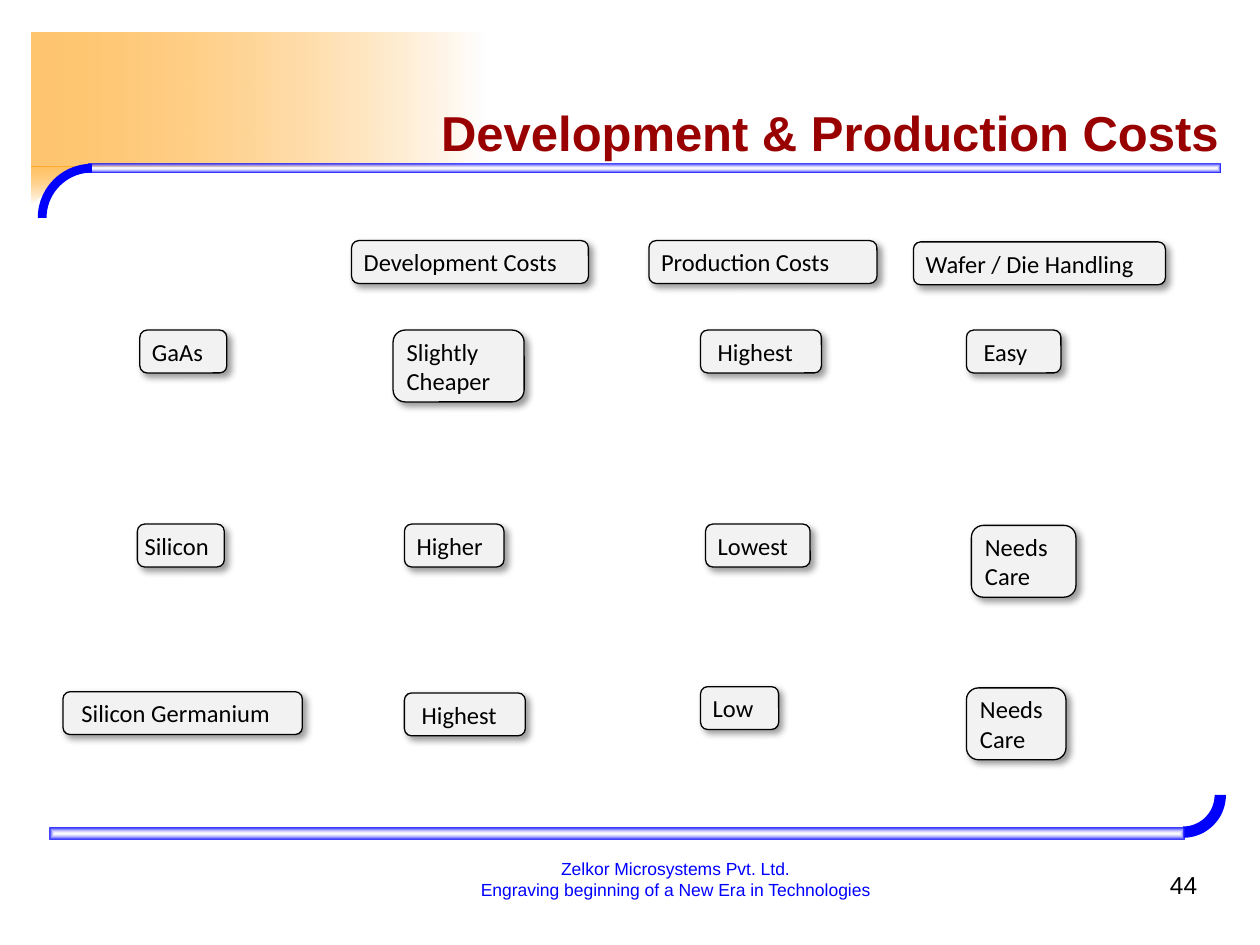
import math
from dataclasses import dataclass

import lxml.etree
import pptx
import pptx.dml.color
import pptx.enum.shapes
import pptx.enum.text
import pptx.oxml
import pptx.oxml.ns
import pptx.util

SHAPE = pptx.enum.shapes.MSO_SHAPE
ANCHOR = pptx.enum.text.MSO_ANCHOR
ALIGN = pptx.enum.text.PP_ALIGN
qn = pptx.oxml.ns.qn


@dataclass(frozen=True)
class Theme:
    heading_font: str = "Arial"
    card_font: str = "Calibri"
    title: str = "990000"
    accent: str = "0000FF"
    glow: str = "FF9900"
    paper: str = "FFFFFF"
    ink: str = "000000"
    card: str = "F2F2F2"
    title_size: int = 28
    body_size: int = 14
    footer_size: int = 10


class SlideBuilder:
    """Draw themed elements on a page measured as 100 columns by 75 rows."""

    def __init__(self, deck, theme):
        self.theme = theme
        self.column = deck.slide_width / 100
        self.row = deck.slide_height / 75
        self.page = deck.slides.add_slide(deck.slide_layouts[6])

    def place(self, left, top, width, height):
        return (round(left * self.column), round(top * self.row),
                round(width * self.column), round(height * self.row))

    def color(self, value):
        return pptx.dml.color.RGBColor.from_string(value)

    def add_lines(self, frame, lines, font, size, color, align, anchor):
        frame.word_wrap = True
        frame.vertical_anchor = anchor
        for index, line in enumerate(lines):
            para = frame.paragraphs[0] if index == 0 else frame.add_paragraph()
            para.alignment = align
            span = para.add_run()
            span.text = line
            span.font.name = font
            span.font.size = pptx.util.Pt(size)
            span.font.color.rgb = self.color(color)
            span.font.bold = size == self.theme.title_size

    def text(self, area, lines, size, color, align):
        box = self.page.shapes.add_textbox(*self.place(*area))
        self.add_lines(box.text_frame, lines, self.theme.heading_font, size, color,
                       align, ANCHOR.BOTTOM)

    def gradient(self, kind, area, stops, angle=None, flip=False):
        shape = self.page.shapes.add_shape(kind, *self.place(*area))
        shape.shadow.inherit = False
        shape.line.fill.background()
        properties = shape._element.spPr
        if flip:
            properties.find(qn("a:xfrm")).set("flipV", "1")
        fill = pptx.oxml.parse_xml(
            f'<a:gradFill {pptx.oxml.ns.nsdecls("a")} rotWithShape="1"><a:gsLst/></a:gradFill>')
        for position, (color, opacity) in zip((0, 100000), stops):
            stop = lxml.etree.SubElement(fill[0], qn("a:gs"), pos=str(position))
            tint = lxml.etree.SubElement(stop, qn("a:srgbClr"), val=color)
            if opacity < 100:
                lxml.etree.SubElement(tint, qn("a:alpha"), val=str(opacity * 1000))
        if angle is None:
            route = lxml.etree.SubElement(fill, qn("a:path"), {"path": "shape"})
            sides = dict.fromkeys("ltrb", "50000")
            lxml.etree.SubElement(route, qn("a:fillToRect"), sides)
        else:
            lxml.etree.SubElement(fill, qn("a:lin"), ang=str(angle * 60000), scaled="1")
        properties.insert(2, fill)

    def bar(self, *area):
        stops = ((self.theme.paper, 27), (self.theme.accent, 100))
        self.gradient(SHAPE.RECTANGLE, area, stops)

    def corner(self, center, inner, outer, start):
        def arc(radius):
            angles = [math.radians(start + step * 5) for step in range(19)]
            return [((center[0] + radius * math.cos(angle)) * self.column,
                     (center[1] + radius * math.sin(angle)) * self.row)
                    for angle in angles]

        points = arc(outer) + arc(inner)[::-1]
        builder = self.page.shapes.build_freeform(*points[0])
        builder.add_line_segments(points[1:], close=True)
        shape = builder.convert_to_shape()
        shape.shadow.inherit = False
        shape.fill.solid()
        shape.fill.fore_color.rgb = self.color(self.theme.accent)
        shape.line.fill.background()

    def card(self, label, left, top, width, lines=1, indent=0.8):
        area = self.place(left, top, width, 1.1 + 2.3 * lines)
        shape = self.page.shapes.add_shape(SHAPE.ROUNDED_RECTANGLE, *area)
        shape.fill.solid()
        shape.fill.fore_color.rgb = self.color(self.theme.card)
        shape.line.color.rgb = self.color(self.theme.ink)
        shape.line.width = pptx.util.Pt(0.75)
        shape.shadow.inherit = False
        shadow = lxml.etree.SubElement(
            shape._element.spPr.find(qn("a:effectLst")), qn("a:outerShdw"),
            blurRad=str(int(pptx.util.Pt(4))), dist=str(int(pptx.util.Pt(3))),
            dir=str(45 * 60000), algn="tl", rotWithShape="0")
        tint = lxml.etree.SubElement(shadow, qn("a:srgbClr"), val=self.theme.ink)
        lxml.etree.SubElement(tint, qn("a:alpha"), val="40000")
        frame = shape.text_frame
        frame.margin_left = round(indent * self.column)
        frame.margin_right = frame.margin_top = frame.margin_bottom = 0
        self.add_lines(frame, [label], self.theme.card_font, self.theme.body_size,
                       self.theme.ink, ALIGN.LEFT, ANCHOR.MIDDLE)


CARDS = [
    ("Development Costs", 27.9, 19.1, 18.8),
    ("Production Costs", 51.5, 19.1, 18.1),
    ("Wafer / Die Handling", 72.5, 19.2, 20),
    ("GaAs", 11.1, 26.2, 6.9),
    ("Slightly Cheaper", 31.2, 26.2, 10.4, 2),
    ("Highest", 55.6, 26.2, 9.6, 1, 1.2),
    ("Easy", 76.7, 26.2, 7.5, 1, 1.2),
    ("Silicon", 10.9, 41.6, 6.9, 1, 0.4),
    ("Higher", 32.1, 41.6, 7.9),
    ("Lowest", 56, 41.6, 8.3),
    ("Needs Care", 77.1, 41.7, 8.3, 2),
    ("Silicon Germanium", 5, 54.9, 19, 1, 1.3),
    ("Highest", 32.1, 55, 9.6, 1, 1.2),
    ("Low", 55.6, 54.5, 6.2),
    ("Needs Care", 76.7, 54.6, 7.9, 2),
]


def main():
    deck = pptx.Presentation()
    deck.slide_width = pptx.util.Inches(10)
    deck.slide_height = pptx.util.Inches(7.5)
    theme = Theme()
    slide = SlideBuilder(deck, theme)

    slide.gradient(SHAPE.RIGHT_TRIANGLE, (2.5, 13.2, 3.3, 3),
                   ((theme.paper, 100), (theme.glow, 60)), 90, flip=True)
    slide.gradient(SHAPE.RECTANGLE, (2.5, 2.6, 36.1, 10.6),
                   ((theme.glow, 57), (theme.paper, 100)), 0)
    slide.corner((93.9, 63.1), 2.5, 3.4, 0)
    slide.bar(3.9, 65.7, 90.1, 0.9)
    slide.bar(7, 13, 89.9, 0.7)
    slide.corner((7.3, 17.3), 3.6, 4.3, 180)

    slide.text((24.9, 3.1, 72.8, 10.2), ["Development & Production Costs"],
               theme.title_size, theme.title, ALIGN.RIGHT)
    slide.text((35.7, 66.9, 35.8, 5),
               ["Zelkor Microsystems Pvt. Ltd.",
                "Engraving beginning of a New Era in Technologies"],
               theme.footer_size, theme.accent, ALIGN.CENTER)
    slide.text((75.2, 66.9, 20.8, 5), ["44"], theme.body_size, theme.ink, ALIGN.RIGHT)

    for card in CARDS:
        slide.card(*card)
    deck.save("out.pptx")


if __name__ == "__main__":
    main()
